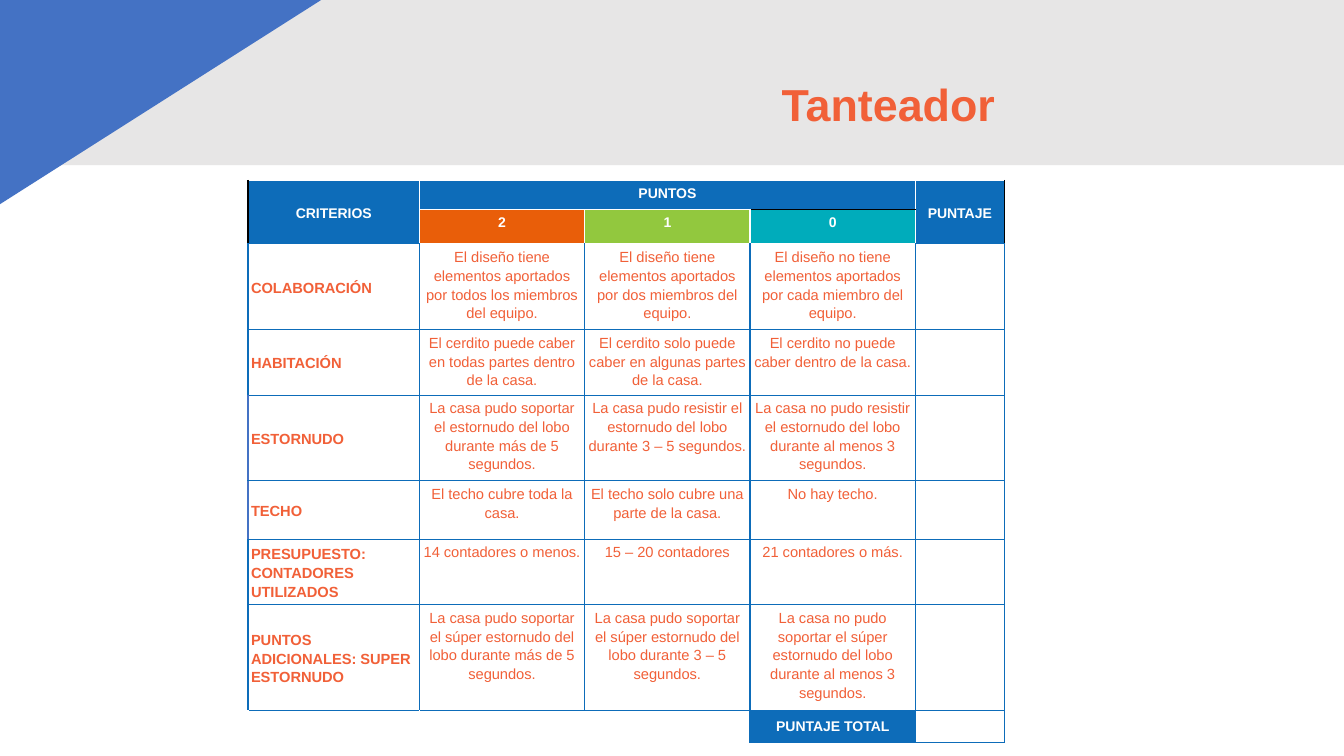
"""Build the scoring rubric slide."""
from lxml import etree
from pptx import Presentation
from pptx.dml.color import RGBColor
from pptx.enum.shapes import MSO_SHAPE
from pptx.enum.text import MSO_ANCHOR, PP_ALIGN
from pptx.oxml.ns import qn
from pptx.util import Inches, Pt

RECT, WEDGE = MSO_SHAPE.RECTANGLE, MSO_SHAPE.RIGHT_TRIANGLE
TOP, MIDDLE = MSO_ANCHOR.TOP, MSO_ANCHOR.MIDDLE
LEFT, CENTER, RIGHT = PP_ALIGN.LEFT, PP_ALIGN.CENTER, PP_ALIGN.RIGHT

WHITE = RGBColor(0xFF, 0xFF, 0xFF)
BLACK = RGBColor(0x00, 0x00, 0x00)
GREY = RGBColor(0xE7, 0xE6, 0xE6)
SKY = RGBColor(0x44, 0x72, 0xC4)
BLUE = RGBColor(0x0D, 0x6C, 0xB9)
CORAL = RGBColor(0xF1, 0x60, 0x38)
ORANGE = RGBColor(0xE9, 0x5E, 0x09)
GREEN = RGBColor(0x92, 0xC8, 0x3E)
TEAL = RGBColor(0x00, 0xAC, 0xBB)

TITLE = "Tanteador"
ROWS = [
    ("CRITERIOS", "PUNTOS", "", "", "PUNTAJE"),
    ("", "2", "1", "0", ""),
    ("COLABORACIÓN",
     "El diseño tiene elementos aportados por todos los miembros del equipo.",
     "El diseño tiene elementos aportados por dos miembros del equipo.",
     "El diseño no tiene elementos aportados por cada miembro del equipo.", ""),
    ("HABITACIÓN",
     "El cerdito puede caber en todas partes dentro de la casa.",
     "El cerdito solo puede caber en algunas partes de la casa.",
     "El cerdito no puede caber dentro de la casa.", ""),
    ("ESTORNUDO",
     "La casa pudo soportar el estornudo del lobo durante más de 5 segundos.",
     "La casa pudo resistir el estornudo del lobo durante 3 – 5 segundos.",
     "La casa no pudo resistir el estornudo del lobo durante al menos 3 segundos.", ""),
    ("TECHO", "El techo cubre toda la casa.",
     "El techo solo cubre una parte de la casa.", "No hay techo.", ""),
    ("PRESUPUESTO: CONTADORES UTILIZADOS", "14 contadores o menos.",
     "15 – 20 contadores", "21 contadores o más.", ""),
    ("PUNTOS ADICIONALES: SUPER ESTORNUDO",
     "La casa pudo soportar el súper estornudo del lobo durante más de 5 segundos.",
     "La casa pudo soportar el súper estornudo del lobo durante 3 – 5 segundos.",
     "La casa no pudo soportar el súper estornudo del lobo durante al menos 3 segundos.", ""),
    ("", "", "", "PUNTAJE TOTAL", ""),
]
WIDTHS = [1.7, 1.64, 1.64, 1.64, 0.88]
HEIGHTS = [0.29, 0.34, 0.85, 0.65, 0.85, 0.58, 0.65, 1.05, 0.32]
SPANS = [(0, 0, 1, 0), (0, 1, 0, 3), (0, 4, 1, 4), (8, 1, 8, 2)]
LAST = len(ROWS) - 1

FILLS = {(1, 1): ORANGE, (1, 2): GREEN, (1, 3): TEAL, (2, 0): WHITE, (LAST, 3): BLUE}
SIDES = ("a:lnL", "a:lnR", "a:lnT", "a:lnB")
INKS = {"W": WHITE, "K": BLACK, "B": BLUE, "S": SKY}
PLAIN = ["BBBB"] * 5
EDGES = {
    0: ["KWWB", "WWWW", "WWWW", "WWWK", "WKWB"],
    1: ["KWWB", "WWWW", "WWWW", "WWKW", "WKWB"],
    2: ["BBBB", "BBWB", "BBWB", "BBWB", "BBBB"],
    4: ["SBBB"] + PLAIN[1:],
    5: ["SBBB"] + PLAIN[1:],
    LAST: ["W-BW", "--BW", "-BBW", "BBBB", "BBBB"],
}


def style(font, size, color, bold):
    font.name, font.size, font.bold = "Arial", Pt(size), bold
    font.color.rgb = color


def add_back(slide, kind, box, color):
    shape = slide.shapes.add_shape(kind, *map(Inches, box))
    shape.shadow.inherit = False
    shape.fill.solid()
    shape.fill.fore_color.rgb = color
    shape.line.fill.background()
    return shape


def add_edges(cell, edges):
    props = cell._tc.get_or_add_tcPr()
    for side, key in zip(SIDES, edges):
        if key in INKS:
            line = etree.SubElement(props, qn(side), w=str(Pt(1)))
            fill = etree.SubElement(line, qn("a:solidFill"))
            etree.SubElement(fill, qn("a:srgbClr"), val=str(INKS[key]))


def fill_cell(cell, row, col, text):
    head = row < 2
    total = row == LAST
    label = col == 0 and not head
    add_edges(cell, EDGES.get(row, PLAIN)[col])
    color = FILLS.get((row, col), BLUE if head else None)
    if color is None:
        cell.fill.background()
    else:
        cell.fill.solid()
        cell.fill.fore_color.rgb = color
    cell.margin_left = cell.margin_right = Inches(0.03)
    cell.margin_top = cell.margin_bottom = Inches(0.03)
    cell.vertical_anchor = MIDDLE if col in (0, 4) or total else TOP
    para = cell.text_frame.paragraphs[0]
    para.alignment = LEFT if label else CENTER
    para.line_spacing = 1.0 if total else 1.15
    if row == 2 and 0 < col < 4:
        para.space_after = Pt(10)
    if text:
        run = para.add_run()
        run.text = text
        white = head or total
        style(run.font, 10 if white else 10.5, WHITE if white else CORAL, white or label)
    else:
        para.font.size = Pt(10)


def add_rubric(slide):
    frame = slide.shapes.add_table(
        len(ROWS), len(WIDTHS), Inches(2.46), Inches(1.79),
        Inches(sum(WIDTHS)), Inches(sum(HEIGHTS)))
    table = frame.table
    table.first_row = table.horz_banding = False
    for col, width in zip(table.columns, WIDTHS):
        col.width = Inches(width)
    for row, height in zip(table.rows, HEIGHTS):
        row.height = Inches(height)
    for r, texts in enumerate(ROWS):
        for c, text in enumerate(texts):
            fill_cell(table.cell(r, c), r, c, text)
    for r1, c1, r2, c2 in SPANS:
        table.cell(r1, c1).merge(table.cell(r2, c2))


def add_title(slide):
    title = slide.shapes.title
    slide.shapes._spTree.append(title._element)
    title.left, title.top = Inches(0.27), Inches(0.34)
    title.width, title.height = Inches(9.7), Inches(1.45)
    title.text_frame.vertical_anchor = MIDDLE
    para = title.text_frame.paragraphs[0]
    para.alignment, para.line_spacing = RIGHT, 0.9
    run = para.add_run()
    run.text = TITLE
    style(run.font, 32, CORAL, True)


def main():
    deck = Presentation()
    deck.slide_width, deck.slide_height = Inches(13.33), Inches(7.5)
    slide = deck.slides.add_slide(deck.slide_layouts[5])
    add_back(slide, RECT, (-0.26, -0.19, 13.59, 1.83), GREY)
    wedge = add_back(slide, WEDGE, (-2.57, -1.72, 8.46, 5.38), SKY)
    wedge.rotation = 180
    wedge._element.spPr.find(qn("a:xfrm")).set("flipH", "1")
    add_title(slide)
    add_rubric(slide)
    deck.save("out.pptx")


if __name__ == "__main__":
    main()
